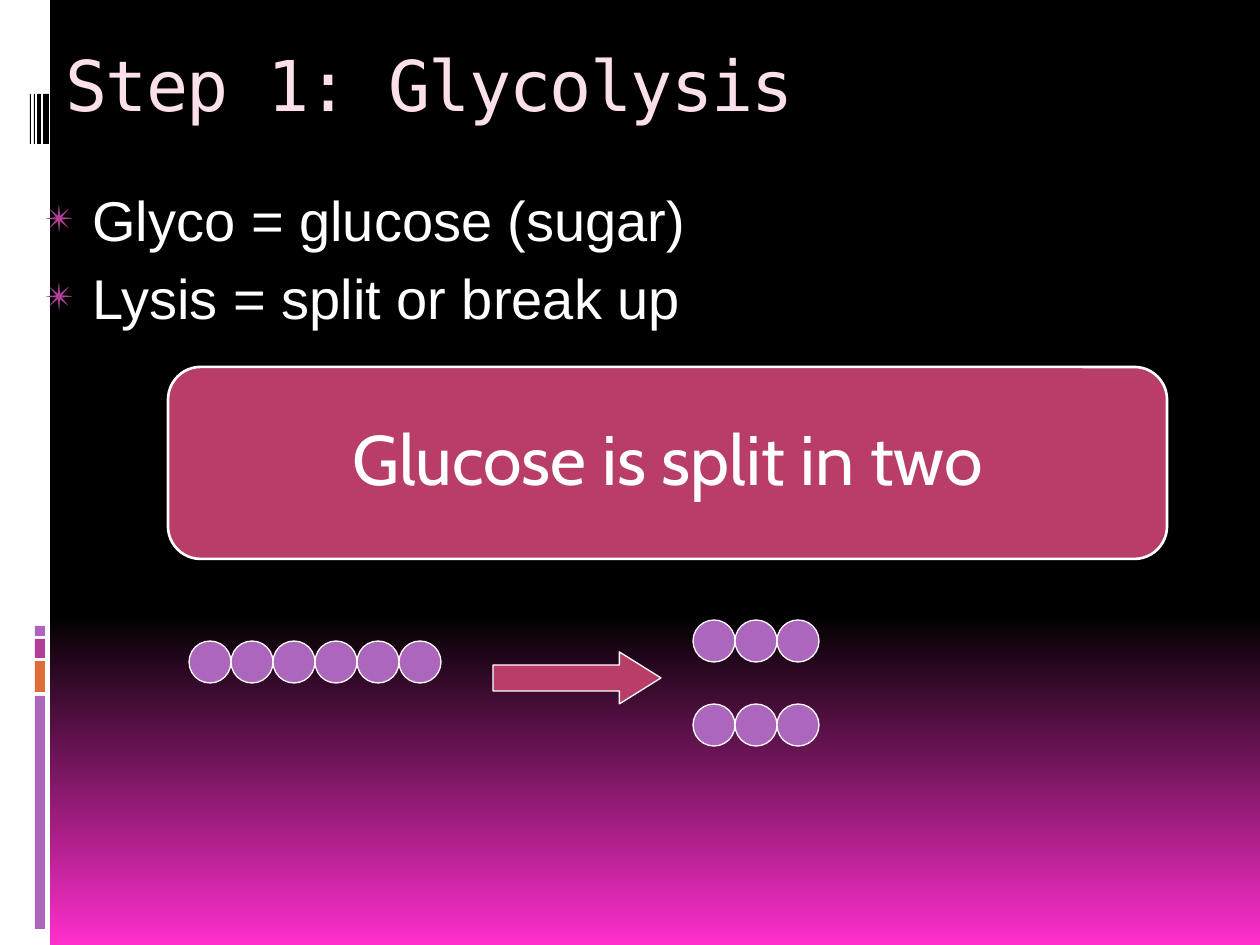
import pptx
import pptx.dml.color
import pptx.enum.shapes
import pptx.enum.text
import pptx.oxml
import pptx.oxml.ns
import pptx.util

RGB = pptx.dml.color.RGBColor
SHAPE = pptx.enum.shapes.MSO_SHAPE
ALIGN = pptx.enum.text.PP_ALIGN
ANCHOR = pptx.enum.text.MSO_ANCHOR

BLACK = RGB(0x00, 0x00, 0x00)
WHITE = RGB(0xFF, 0xFF, 0xFF)
HOT_PINK = RGB(0xFF, 0x2F, 0xCD)
PALE_PINK = RGB(0xFB, 0xE0, 0xEC)
PURPLE = RGB(0xAC, 0x66, 0xBB)
ORANGE = RGB(0xDE, 0x6C, 0x36)
MAGENTA = RGB(0xB1, 0x3F, 0x9A)
ROSE = RGB(0xB8, 0x3D, 0x68)

TITLE = "Step 1: Glycolysis"
DEFINITIONS = ["Glyco = glucose (sugar)", "Lysis = split or break up"]
BANNER = "Glucose is split in two"

SIDEBAR_WIDTH = 50
SIDE_BLOCKS = [(626, 10, PURPLE), (639, 19, MAGENTA), (661, 31, ORANGE), (696, 233, PURPLE)]
BARCODE = [(30, 1), (34, 1), (37, 4), (43, 6)]
CARBON_CHAINS = [(189, 641, 6), (693, 620, 3), (693, 704, 3)]
CARBON = 42

SCALE = 914400 / 126


def px(*lengths):
    return [round(length * SCALE) for length in lengths]


def add_filled(shapes, kind, place, color, line_width=0):
    shape = shapes.add_shape(kind, *px(*place))
    shape.shadow.inherit = False
    shape.fill.solid()
    shape.fill.fore_color.rgb = color
    if line_width:
        shape.line.color.rgb = WHITE
        shape.line.width = pptx.util.Pt(line_width)
    else:
        shape.line.fill.background()
    return shape


def set_font(para, name, size, color):
    para.font.name = name
    para.font.size = pptx.util.Pt(size)
    para.font.color.rgb = color


def add_bullet(para):
    properties = para._p.get_or_add_pPr()
    indent = px(48)[0]
    properties.set("marL", str(indent))
    properties.set("indent", str(-indent))
    namespace = pptx.oxml.ns.nsdecls("a")
    bullet_parts = [
        f'<a:buClr {namespace}><a:srgbClr val="{MAGENTA}"/></a:buClr>',
        f'<a:buSzPct {namespace} val="65000"/>',
        f'<a:buFont {namespace} typeface="Arial"/>',
        f'<a:buChar {namespace} char="✴"/>',
    ]
    position = 1 if para.space_before is not None else 0
    for offset, part in enumerate(bullet_parts):
        properties.insert(position + offset, pptx.oxml.parse_xml(part))


def set_background(page):
    fill = page.background.fill
    fill.gradient()
    fill.gradient_angle = 270
    for stop, position, color in zip(fill.gradient_stops, (0.65, 1), (BLACK, HOT_PINK)):
        stop.position = position
        stop.color.rgb = color


def add_sidebar(page):
    add_filled(page.shapes, SHAPE.RECTANGLE, (0, 0, SIDEBAR_WIDTH, 945), WHITE)
    for top, height, color in SIDE_BLOCKS:
        add_filled(page.shapes, SHAPE.RECTANGLE, (35, top, 10, height), color)
    for left, width in BARCODE:
        add_filled(page.shapes, SHAPE.RECTANGLE, (left, 94, width, 50), BLACK)


def set_title(page):
    title = page.shapes.title
    title.left, title.top, title.width, title.height = px(53, 31, 1029, 105)
    frame = title.text_frame
    frame.text = TITLE
    frame.word_wrap = True
    frame.auto_size = pptx.enum.text.MSO_AUTO_SIZE.NONE
    frame.vertical_anchor = ANCHOR.MIDDLE
    para = frame.paragraphs[0]
    para.alignment = ALIGN.LEFT
    set_font(para, "DejaVu Sans Mono", 40, PALE_PINK)
    para.runs[0].font._element.set("spc", "-100")


def add_diagram(page):
    group = page.shapes.add_group_shape()
    for left, top, count in CARBON_CHAINS:
        for index in range(count):
            place = (left + index * CARBON, top, CARBON, CARBON)
            add_filled(group.shapes, SHAPE.OVAL, place, PURPLE, 0.75)
    arrow = add_filled(group.shapes, SHAPE.RIGHT_ARROW, (493, 652, 168, 52), ROSE, 0.75)
    arrow.adjustments[0] = 0.5
    arrow.adjustments[1] = 0.8


def add_banner(page):
    banner = add_filled(page.shapes, SHAPE.ROUNDED_RECTANGLE, (168, 367, 999, 192), ROSE, 1.5)
    banner.adjustments[0] = 0.17
    frame = banner.text_frame
    frame.word_wrap = True
    frame.vertical_anchor = ANCHOR.MIDDLE
    para = frame.paragraphs[0]
    para.text = BANNER
    para.alignment = ALIGN.CENTER
    para.line_spacing = 0.9
    set_font(para, "Cabin", 40, WHITE)


def add_definitions(page):
    box = page.shapes.add_textbox(*px(32, 179, 1040, 336))
    frame = box.text_frame
    frame.word_wrap = True
    for index, text in enumerate(DEFINITIONS):
        para = frame.add_paragraph() if index else frame.paragraphs[0]
        para.text = text
        para.space_before = pptx.util.Pt(6.4)
        set_font(para, "Arial", 32, WHITE)
        add_bullet(para)


def main():
    deck = pptx.Presentation()
    deck.slide_width, deck.slide_height = px(1260, 945)
    page = deck.slides.add_slide(deck.slide_layouts[5])
    set_background(page)
    add_sidebar(page)
    set_title(page)
    add_diagram(page)
    add_banner(page)
    add_definitions(page)
    deck.save("out.pptx")


if __name__ == "__main__":
    main()
